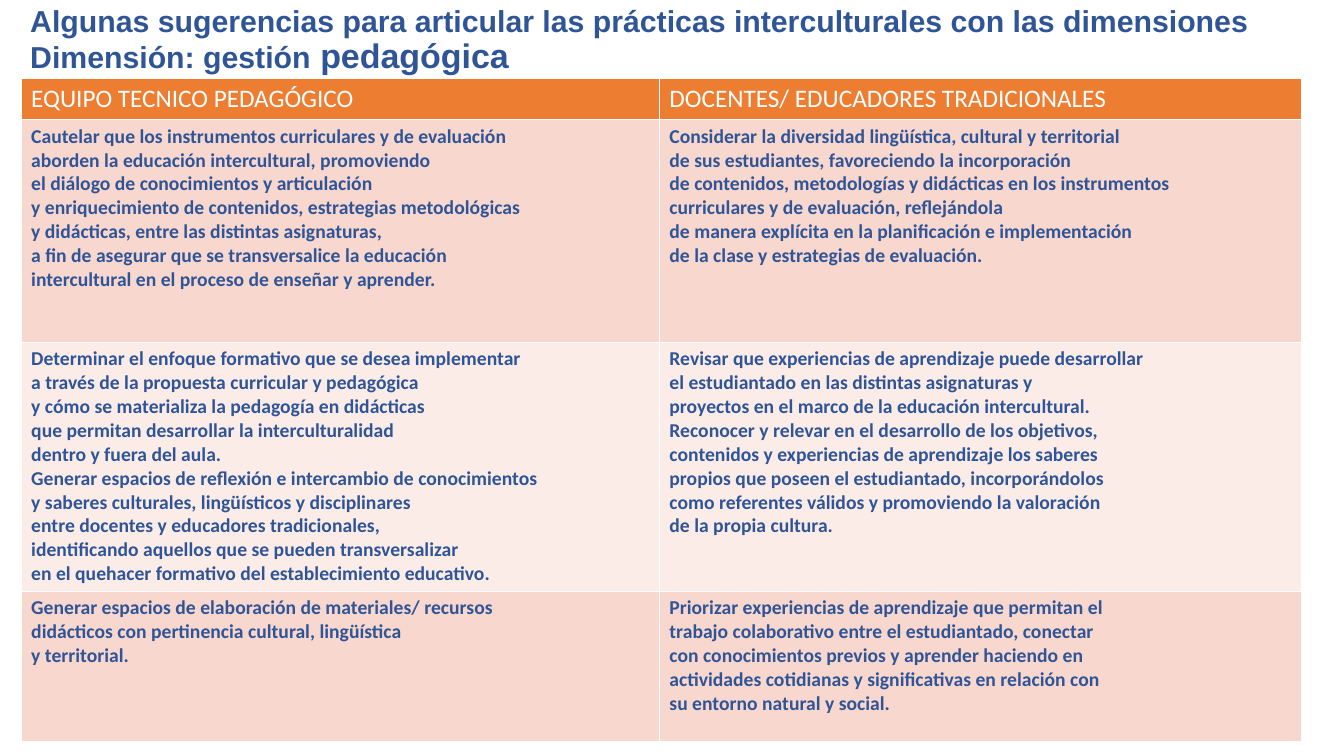
import dataclasses

import pptx
import pptx.dml.color
import pptx.enum.text
import pptx.oxml
import pptx.oxml.ns
import pptx.util
from pptx.util import Inches


@dataclasses.dataclass(frozen=True)
class Theme:
    title_font: str = "Arial"
    table_font: str = "Calibri"
    blue: str = "2F5597"
    white: str = "FFFFFF"
    orange: str = "ED7D31"
    bands: tuple = ("F8D7CE", "FCECE8")
    title_size: float = 21.6
    emphasis_size: float = 24.3
    header_size: float = 18
    body_size: float = 14
    border_width: float = 1


THEME = Theme()

TITLE_LINES = [
    [("Algunas sugerencias para articular las prácticas interculturales con las dimensiones", THEME.title_size)],
    [("Dimensión: gestión", THEME.title_size), (" pedagógica", THEME.emphasis_size)],
]

HEADERS = ["EQUIPO TECNICO PEDAGÓGICO", "DOCENTES/ EDUCADORES TRADICIONALES"]

# Each row holds one list of lines per column
SUGGESTIONS = [
    [
        [
            "Cautelar que los instrumentos curriculares y de evaluación",
            "aborden la educación intercultural, promoviendo",
            "el diálogo de conocimientos y articulación",
            "y enriquecimiento de contenidos, estrategias metodológicas",
            "y didácticas, entre las distintas asignaturas,",
            "a fin de asegurar que se transversalice la educación",
            "intercultural en el proceso de enseñar y aprender.",
        ],
        [
            "Considerar la diversidad lingüística, cultural y territorial",
            "de sus estudiantes, favoreciendo la incorporación",
            "de contenidos, metodologías y didácticas en los instrumentos",
            "curriculares y de evaluación, reflejándola",
            "de manera explícita en la planificación e implementación",
            "de la clase y estrategias de evaluación.",
        ],
    ],
    [
        [
            "Determinar el enfoque formativo que se desea implementar",
            "a través de la propuesta curricular y pedagógica",
            "y cómo se materializa la pedagogía en didácticas",
            "que permitan desarrollar la interculturalidad",
            "dentro y fuera del aula.",
            "Generar espacios de reflexión e intercambio de conocimientos",
            "y saberes culturales, lingüísticos y disciplinares",
            "entre docentes y educadores tradicionales,",
            "identificando aquellos que se pueden transversalizar",
            "en el quehacer formativo del establecimiento educativo.",
        ],
        [
            "Revisar que experiencias de aprendizaje puede desarrollar",
            "el estudiantado en las distintas asignaturas y",
            "proyectos en el marco de la educación intercultural.",
            "Reconocer y relevar en el desarrollo de los objetivos,",
            "contenidos y experiencias de aprendizaje los saberes",
            "propios que poseen el estudiantado, incorporándolos",
            "como referentes válidos y promoviendo la valoración",
            "de la propia cultura.",
        ],
    ],
    [
        [
            "Generar espacios de elaboración de materiales/ recursos",
            "didácticos con pertinencia cultural, lingüística",
            "y territorial.",
        ],
        [
            "Priorizar experiencias de aprendizaje que permitan el",
            "trabajo colaborativo entre el estudiantado, conectar",
            "con conocimientos previos y aprender haciendo en",
            "actividades cotidianas y significativas en relación con",
            "su entorno natural y social.",
        ],
    ],
]

COLUMN_WIDTHS = [6.33, 6.37]
ROW_HEIGHTS = [0.4, 2.21, 2.47, 1.49]


def add_text(paragraph, text, *, font, size, color, bold=False):
    run = paragraph.add_run()
    run.text = text
    run.font.name = font
    run.font.size = pptx.util.Pt(size)
    run.font.bold = bold
    run.font.color.rgb = pptx.dml.color.RGBColor.from_string(color)


def set_borders(cell, color, width):
    properties = cell._tc.get_or_add_tcPr()
    for index, side in enumerate(("lnL", "lnR", "lnT", "lnB")):
        line = pptx.oxml.parse_xml(
            f'<a:{side} {pptx.oxml.ns.nsdecls("a")} w="{pptx.util.Pt(width)}">'
            f'<a:solidFill><a:srgbClr val="{color}"/></a:solidFill></a:{side}>'
        )
        properties.insert(index, line)


def fill_cell(cell, lines, fill, **text_format):
    cell.fill.solid()
    cell.fill.fore_color.rgb = pptx.dml.color.RGBColor.from_string(fill)
    set_borders(cell, THEME.white, THEME.border_width)
    frame = cell.text_frame
    for index, line in enumerate(lines):
        paragraph = frame.add_paragraph() if index else frame.paragraphs[0]
        add_text(paragraph, line, font=THEME.table_font, **text_format)


def place_title(slide, left, top, width, height):
    title = slide.shapes.title
    title.left, title.top = Inches(left), Inches(top)
    title.width, title.height = Inches(width), Inches(height)
    frame = title.text_frame
    frame.word_wrap = True
    frame.auto_size = pptx.enum.text.MSO_AUTO_SIZE.NONE
    frame.vertical_anchor = pptx.enum.text.MSO_ANCHOR.TOP
    frame.margin_top = frame.margin_bottom = 0
    paragraph = frame.paragraphs[0]
    paragraph.alignment = pptx.enum.text.PP_ALIGN.LEFT
    paragraph.line_spacing = 0.9
    for index, line in enumerate(TITLE_LINES):
        if index:
            paragraph.add_line_break()
        for text, size in line:
            add_text(paragraph, text, font=THEME.title_font, size=size, color=THEME.blue, bold=True)


def place_table(slide, left, top, width, height):
    table = slide.shapes.add_table(
        len(ROW_HEIGHTS), len(COLUMN_WIDTHS), Inches(left), Inches(top), Inches(width), Inches(height)
    ).table
    for column, column_width in zip(table.columns, COLUMN_WIDTHS):
        column.width = Inches(column_width)
    for row, row_height in zip(table.rows, ROW_HEIGHTS):
        row.height = Inches(row_height)

    # Header row
    for column, header in enumerate(HEADERS):
        fill_cell(table.cell(0, column), [header], THEME.orange, size=THEME.header_size, color=THEME.white)

    # Suggestions in alternating bands
    for row, suggestions in enumerate(SUGGESTIONS):
        band = THEME.bands[row % len(THEME.bands)]
        for column, lines in enumerate(suggestions):
            fill_cell(table.cell(row + 1, column), lines, band,
                      size=THEME.body_size, color=THEME.blue, bold=True)


def main():
    presentation = pptx.Presentation()
    presentation.slide_width, presentation.slide_height = Inches(13.33), Inches(7.5)
    slide = presentation.slides.add_slide(presentation.slide_layouts[5])
    place_title(slide, 0.2, 0.06, 12.7, 0.72)
    place_table(slide, 0.21, 0.78, sum(COLUMN_WIDTHS), sum(ROW_HEIGHTS))
    presentation.save("out.pptx")


if __name__ == "__main__":
    main()
